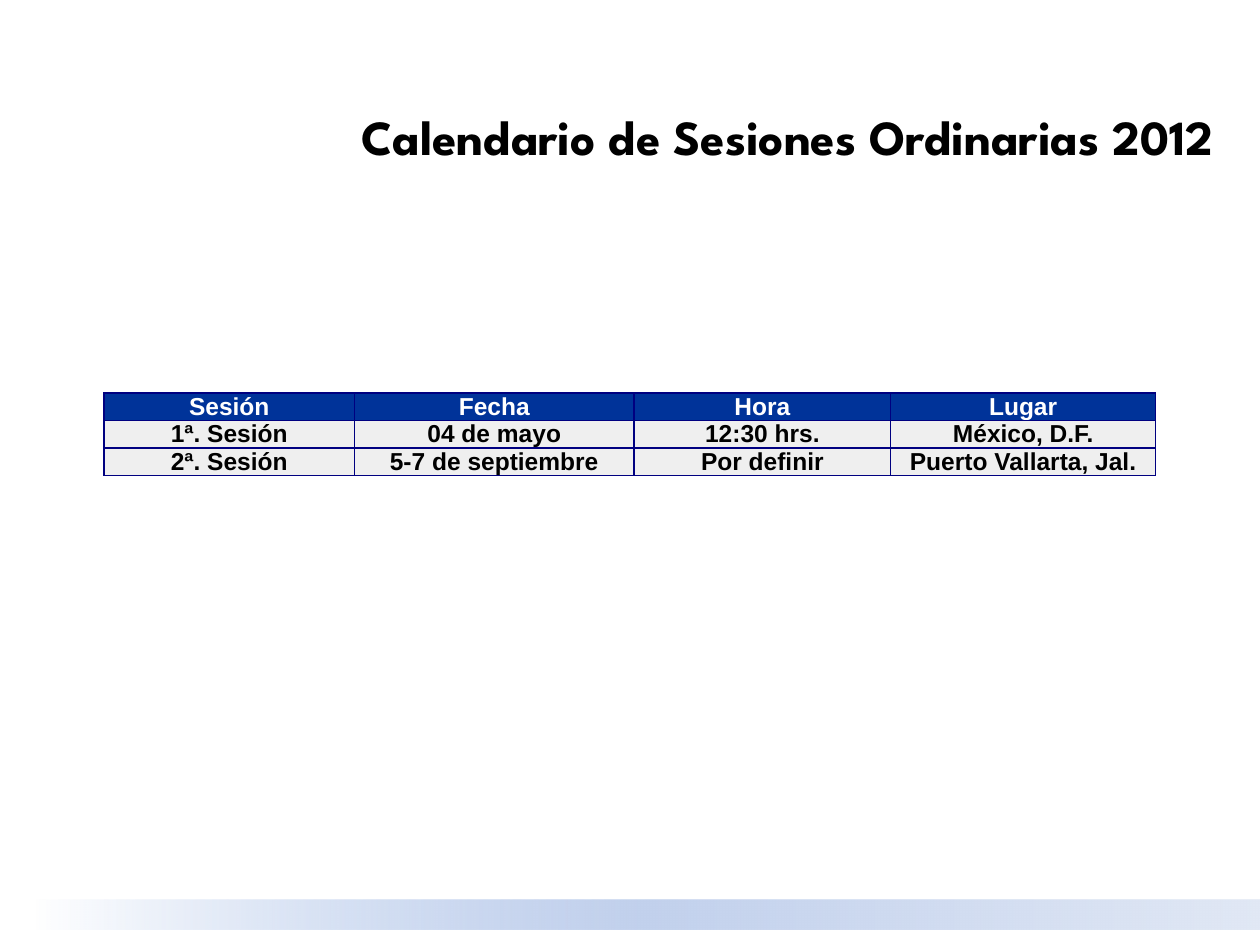
from lxml import etree
from pptx import Presentation
from pptx.dml.color import RGBColor
from pptx.enum.shapes import MSO_SHAPE
from pptx.enum.text import MSO_ANCHOR, PP_ALIGN
from pptx.oxml.ns import qn
from pptx.util import Cm, Pt

RECTANGLE = MSO_SHAPE.RECTANGLE
MIDDLE = MSO_ANCHOR.MIDDLE
CENTER, RIGHT = PP_ALIGN.CENTER, PP_ALIGN.RIGHT

COLORS = {
    "text": "000000",
    "header_text": "FFFFFF",
    "header_fill": "003399",
    "body_fill": "D9D9D9",
    "border": "000080",
    "band_start": "9AB5E4",
    "band_middle": "C2D1ED",
    "band_end": "E1E8F5",
}
BODY_OPACITY = 40
BAND_STOPS = [(0, "band_start", 0), (50, "band_middle", 100), (100, "band_end", 100)]

SESSIONS = [
    ("Sesión", "Fecha", "Hora", "Lugar"),
    ("1ª. Sesión", "04 de mayo", "12:30 hrs.", "México, D.F."),
    ("2ª. Sesión", "5-7 de septiembre", "Por definir", "Puerto Vallarta, Jal."),
]
COLUMN_SHARES = (0.238, 0.266, 0.244, 0.252)


def add_color(parent, color, opacity=100):
    """Append a colour element with its opacity in percent."""
    value = etree.SubElement(parent, qn("a:srgbClr"), val=COLORS[color])
    if opacity < 100:
        etree.SubElement(value, qn("a:alpha"), val=str(opacity * 1000))


def add_run(paragraph, text, font_name, size, color):
    """Add one bold run to a paragraph."""
    run = paragraph.add_run()
    run.text = text
    run.font.name = font_name
    run.font.size = Pt(size)
    run.font.bold = True
    run.font.color.rgb = RGBColor.from_string(COLORS[color])


def add_footer_band(slide, left, top, width, height):
    """Draw the band that fades in from the left."""
    band = slide.shapes.add_shape(RECTANGLE, left, top, width, height)
    band.shadow.inherit = False
    band.line.fill.background()
    band.fill.gradient()
    band.fill.gradient_angle = 0
    stops = band.element.spPr.find(qn("a:gradFill")).find(qn("a:gsLst"))
    for stop in list(stops):
        stops.remove(stop)
    for position, color, opacity in BAND_STOPS:
        stop = etree.SubElement(stops, qn("a:gs"), pos=str(position * 1000))
        add_color(stop, color, opacity)


def add_title(slide, left, top, width, height):
    """Place the right-aligned slide title."""
    title = slide.shapes.add_textbox(left, top, width, height).text_frame
    title.word_wrap = True
    title.vertical_anchor = MIDDLE
    heading = title.paragraphs[0]
    heading.alignment = RIGHT
    add_run(heading, "Calendario de Sesiones Ordinarias 2012",
            "League Spartan", 28, "text")


def format_cell(cell, text, is_header):
    """Fill, border and write one cell."""
    cell.margin_left = cell.margin_right = Cm(0.18)
    cell.margin_top = cell.margin_bottom = 0
    properties = cell._tc.get_or_add_tcPr()
    for side in ("lnL", "lnR", "lnT", "lnB"):
        border = etree.SubElement(properties, qn(f"a:{side}"), w=str(Pt(1)))
        add_color(etree.SubElement(border, qn("a:solidFill")), "border")
    fill = etree.SubElement(properties, qn("a:solidFill"))
    if is_header:
        add_color(fill, "header_fill")
    else:
        add_color(fill, "body_fill", BODY_OPACITY)
    entry = cell.text_frame.paragraphs[0]
    entry.alignment = CENTER
    add_run(entry, text, "Arial", 14, "header_text" if is_header else "text")


def add_calendar(slide, left, top, width, height):
    """Place the table of sessions."""
    calendar = slide.shapes.add_table(
        len(SESSIONS), len(COLUMN_SHARES), left, top, width, height).table
    calendar.horz_banding = False
    for column, share in zip(calendar.columns, COLUMN_SHARES):
        column.width = int(width * share)
    for row_index, session in enumerate(SESSIONS):
        for column_index, text in enumerate(session):
            format_cell(calendar.cell(row_index, column_index), text, row_index == 0)


def main():
    """Build and save the slide."""
    deck = Presentation()
    deck.slide_width, deck.slide_height = Cm(25.4), Cm(19.05)
    slide = deck.slides.add_slide(deck.slide_layouts[6])
    add_footer_band(slide, Cm(0.71), Cm(18.13), Cm(24.69), Cm(0.61))
    add_calendar(slide, Cm(2.1), Cm(7.92), Cm(21.2), Cm(1.67))
    add_title(slide, Cm(5.1), Cm(1.32), Cm(19.6), Cm(2.84))
    deck.save("out.pptx")


if __name__ == "__main__":
    main()
